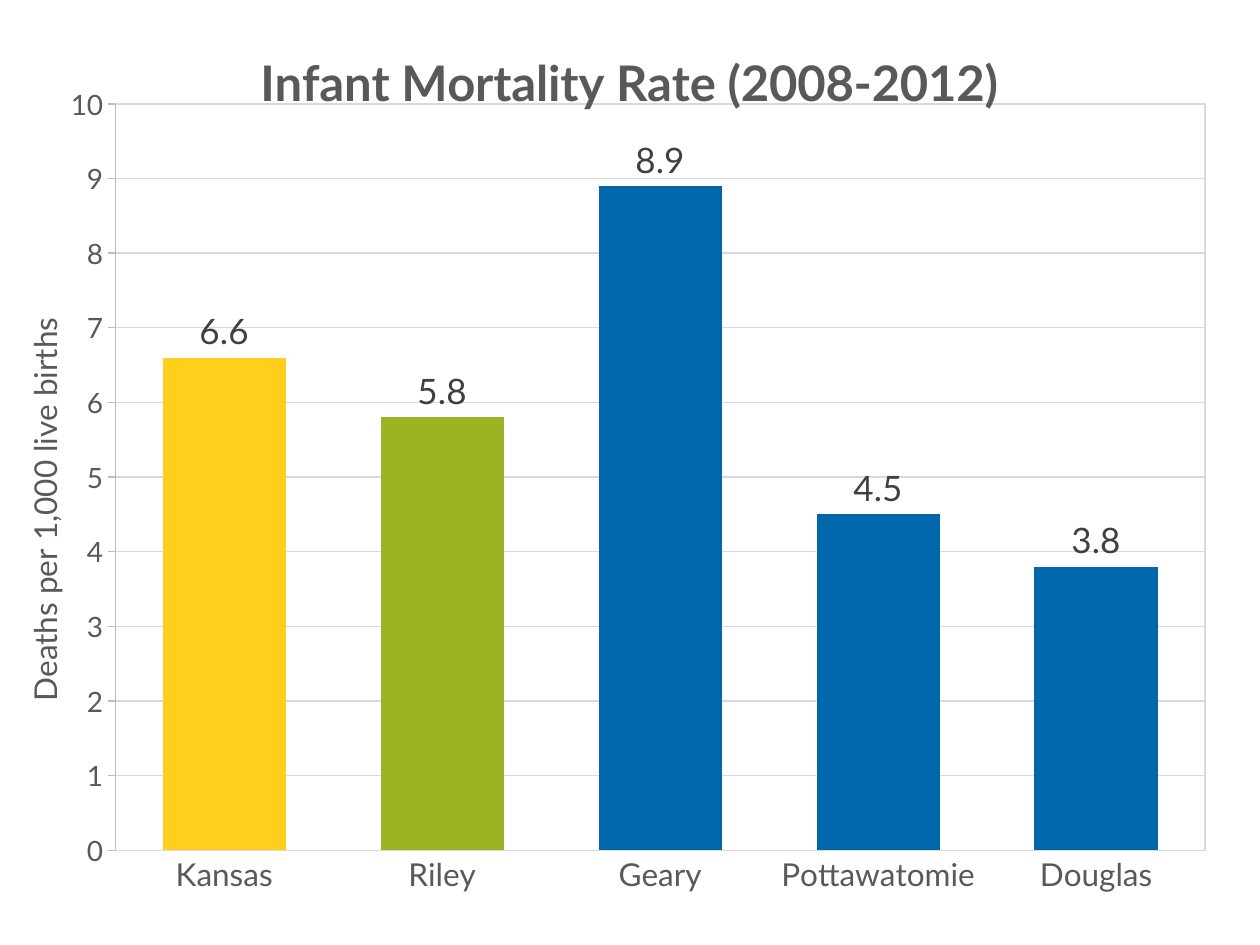
from lxml.etree import fromstring
from pptx import Presentation
from pptx.chart.data import CategoryChartData
from pptx.dml.color import RGBColor
from pptx.enum.chart import XL_CHART_TYPE, XL_LABEL_POSITION, XL_TICK_MARK
from pptx.oxml.ns import qn
from pptx.util import Inches, Pt

COLORS = {"text": "595959", "label": "404040", "grid": "D9D9D9", "axis": "BDBDBD",
          "state": "FFCF1D", "home": "9EB323", "county": "0067AA"}
# category: (deaths per 1,000, colour name)
RATES = {"Kansas": (6.6, "state"), "Riley": (5.8, "home"), "Geary": (8.9, "county"),
         "Pottawatomie": (4.5, "county"), "Douglas": (3.8, "county")}
NAMESPACES = ('xmlns:c="http://schemas.openxmlformats.org/drawingml/2006/chart" '
              'xmlns:a="http://schemas.openxmlformats.org/drawingml/2006/main"')


def color(name):
    return RGBColor.from_string(COLORS[name])


def style_font(font, size, name="text", bold=False):
    font.name, font.size, font.bold = "Lato", Pt(size), bold
    font.color.rgb = color(name)


def style_line(line, name):
    line.color.rgb = color(name)
    line.width = Pt(0.75)


def write_title(owner, text, size, bold=False, place=None):
    """Give a chart or an axis a title."""
    owner.has_title = True
    title = owner.chart_title if hasattr(owner, "chart_title") else owner.axis_title
    para = title.text_frame.paragraphs[0]
    span = para.add_run()
    span.text = text
    for font in (para.font, span.font):
        style_font(font, size, bold=bold)
    set_layout(title._element, 1, x=place[0], y=place[1])


def set_layout(element, index, inner=False, **shares):
    """Place a chart part by shares of the chart's size."""
    for old in element.findall(qn("c:layout")):
        element.remove(old)
    target = '<c:layoutTarget val="inner"/>' if inner else ""
    modes = "".join(f'<c:{key}Mode val="edge"/>' for key in "xy")
    values = "".join(f'<c:{key} val="{share}"/>' for key, share in shares.items())
    element.insert(index, fromstring(
        f"<c:layout {NAMESPACES}><c:manualLayout>{target}{modes}{values}"
        "</c:manualLayout></c:layout>"))


def style_axes(chart):
    categories, values = chart.category_axis, chart.value_axis
    for axis, size, line, tick in ((categories, 18, "grid", XL_TICK_MARK.NONE),
                                   (values, 16, "axis", XL_TICK_MARK.OUTSIDE)):
        style_font(axis.tick_labels.font, size)
        style_line(axis.format.line, line)
        axis.major_tick_mark, axis.minor_tick_mark = tick, XL_TICK_MARK.NONE
    values.minimum_scale, values.maximum_scale, values.major_unit = 0, 10, 1
    values.tick_labels.number_format = "#,##0"
    values.tick_labels.number_format_is_linked = False
    style_line(values.major_gridlines.format.line, "grid")
    write_title(values, "Deaths per 1,000 live births", 18, place=(0.01, 0.33))


def style_columns(plot):
    plot.gap_width, plot.vary_by_categories = 77, False
    series = plot.series[0]
    for index, (_, name) in enumerate(RATES.values()):
        fill = series.points[index].format.fill
        fill.solid()
        fill.fore_color.rgb = color(name)
    labels = series.data_labels
    labels.show_value = True
    labels.number_format, labels.number_format_is_linked = "#,##0.0", False
    labels.position = XL_LABEL_POSITION.OUTSIDE_END
    style_font(labels.font, 20, "label")


def add_rate_chart(page, box):
    data = CategoryChartData(number_format="0.0")
    data.categories = list(RATES)
    data.add_series("Series 1", [rate for rate, _ in RATES.values()])
    chart = page.shapes.add_chart(XL_CHART_TYPE.COLUMN_CLUSTERED, *box, data).chart
    chart.has_legend = False
    chart.font.name, chart.font.size = "Calibri", Pt(10)
    write_title(chart, "Infant Mortality Rate (2008-2012)", 28, bold=True, place=(0.2, 0.04))
    style_axes(chart)
    style_columns(chart.plots[0])

    # Plot area: fixed place and a thin frame
    area = chart._chartSpace.chart.plotArea
    set_layout(area, 0, inner=True, x=0.09, y=0.11, w=0.88, h=0.79)
    area.append(fromstring(
        f'<c:spPr {NAMESPACES}><a:noFill/><a:ln w="{Pt(0.75)}"><a:solidFill>'
        f'<a:srgbClr val="{COLORS["grid"]}"/></a:solidFill></a:ln></c:spPr>'))


def main():
    deck = Presentation()
    deck.slide_width, deck.slide_height = Inches(10), Inches(7.5)
    page = deck.slides.add_slide(deck.slide_layouts[6])
    add_rate_chart(page, (Inches(0.03), 0, Inches(9.83), deck.slide_height))
    deck.save("out.pptx")


if __name__ == "__main__":
    main()
